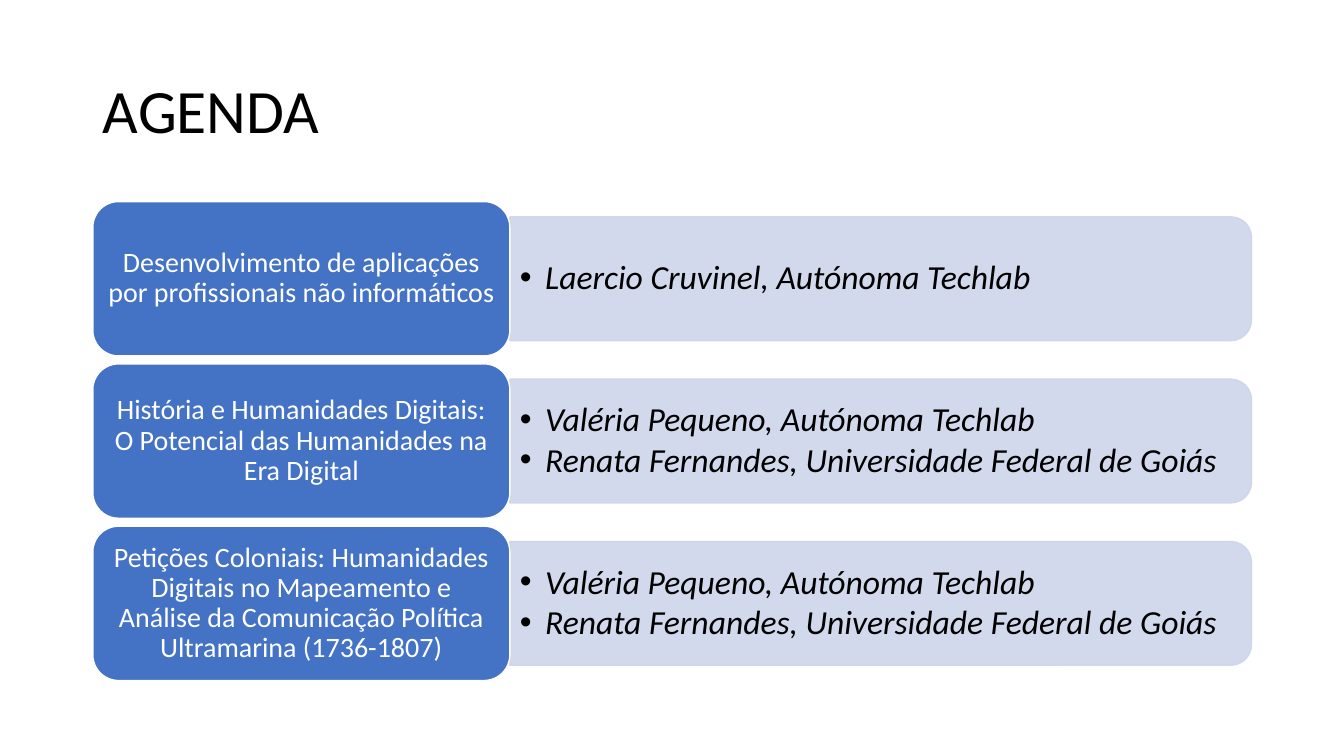
from lxml.etree import SubElement as Sub
from pptx import Presentation
from pptx.dml.color import RGBColor
from pptx.enum.shapes import MSO_SHAPE as Kind
from pptx.enum.text import MSO_ANCHOR as Anchor, MSO_AUTO_SIZE as Fit, PP_ALIGN as Align
from pptx.oxml.ns import qn
from pptx.util import Cm, Pt

BLUE, PALE, WHITE, BLACK = "4472C4", "CFD5EA", "FFFFFF", "000000"
LEFT, TOP, STEP = 2.34, 5.08, 4.09
WIDE, HIGH = 10.51, 3.89
LONG, THICK = 18.69, 3.12
VALERIA = "Valéria Pequeno, Autónoma Techlab"
RENATA = "Renata Fernandes, Universidade Federal de Goiás"
ROWS = [
    ("Desenvolvimento de aplicações por profissionais não informáticos",
     ["Laercio Cruvinel, Autónoma Techlab"]),
    ("História e Humanidades Digitais: O Potencial das Humanidades na Era Digital",
     [VALERIA, RENATA]),
    ("Petições Coloniais: Humanidades Digitais no Mapeamento e Análise da "
     "Comunicação Política Ultramarina (1736-1807)",
     [VALERIA, RENATA]),
]


def paint(form, color):
    form.solid()
    form.fore_color.rgb = RGBColor.from_string(color)


def fade(form, share):
    tint = form.fore_color._xFill.find(qn("a:srgbClr"))
    Sub(tint, qn("a:alpha"), val=str(share * 1000))


def block(slide, kind, area, fill, edge):
    shape = slide.shapes.add_shape(kind, *map(Cm, area))
    shape.shadow.inherit = False
    paint(shape.fill, fill)
    paint(shape.line.fill, edge)
    shape.line.width = Pt(1)
    return shape


def frame(shape):
    text = shape.text_frame
    text.word_wrap = True
    text.auto_size = Fit.NONE
    text.vertical_anchor = Anchor.MIDDLE
    return text


def write(para, words, size, color, align=Align.LEFT, slant=False):
    para.alignment = align
    para.line_spacing = 0.9
    run = para.add_run()
    run.text = words
    font = run.font
    font.name, font.size, font.italic = "Calibri", Pt(size), slant
    font.color.rgb = RGBColor.from_string(color)


def bullet(para):
    props = para._p.get_or_add_pPr()
    props.set("marL", str(Cm(0.64)))
    props.set("indent", str(-Cm(0.64)))
    Sub(props, qn("a:buFont"), typeface="Arial")
    Sub(props, qn("a:buChar"), char="•")


def head(slide, words):
    title = slide.shapes.title
    title.left, title.top, title.width, title.height = map(Cm, (LEFT, 1.01, 29.21, 3.68))
    write(frame(title).paragraphs[0], words, 44, BLACK)


def strip(slide, mid):
    left = LEFT + WIDE + (LONG - THICK) / 2
    shape = block(slide, Kind.ROUND_2_SAME_RECTANGLE,
                  (left, mid - LONG / 2, THICK, LONG), PALE, PALE)
    shape.rotation = 90
    fade(shape.fill, 90)
    fade(shape.line.fill, 90)


def names(slide, mid, people):
    area = (LEFT + WIDE, mid - 1.41, 18.54, 2.82)
    text = frame(slide.shapes.add_textbox(*map(Cm, area)))
    for spot, person in enumerate(people):
        para = text.add_paragraph() if spot else text.paragraphs[0]
        bullet(para)
        para.space_after = Pt(3)
        write(para, person, 24, BLACK, slant=True)


def topic(slide, mid, words):
    area = (LEFT, mid - HIGH / 2, WIDE, HIGH)
    text = frame(block(slide, Kind.ROUNDED_RECTANGLE, area, BLUE, WHITE))
    text.margin_left = text.margin_right = Cm(0.2)
    text.margin_top = text.margin_bottom = Cm(0.1)
    write(text.paragraphs[0], words, 20, WHITE, Align.CENTER)


def main():
    """Build the agenda slide."""
    deck = Presentation()
    deck.slide_width, deck.slide_height = Cm(33.87), Cm(19.05)
    slide = deck.slides.add_slide(deck.slide_layouts[5])
    head(slide, "AGENDA")
    for row, (words, people) in enumerate(ROWS):
        mid = TOP + row * STEP + HIGH / 2
        strip(slide, mid)
        names(slide, mid, people)
        topic(slide, mid, words)
    deck.save("out.pptx")


if __name__ == "__main__":
    main()
